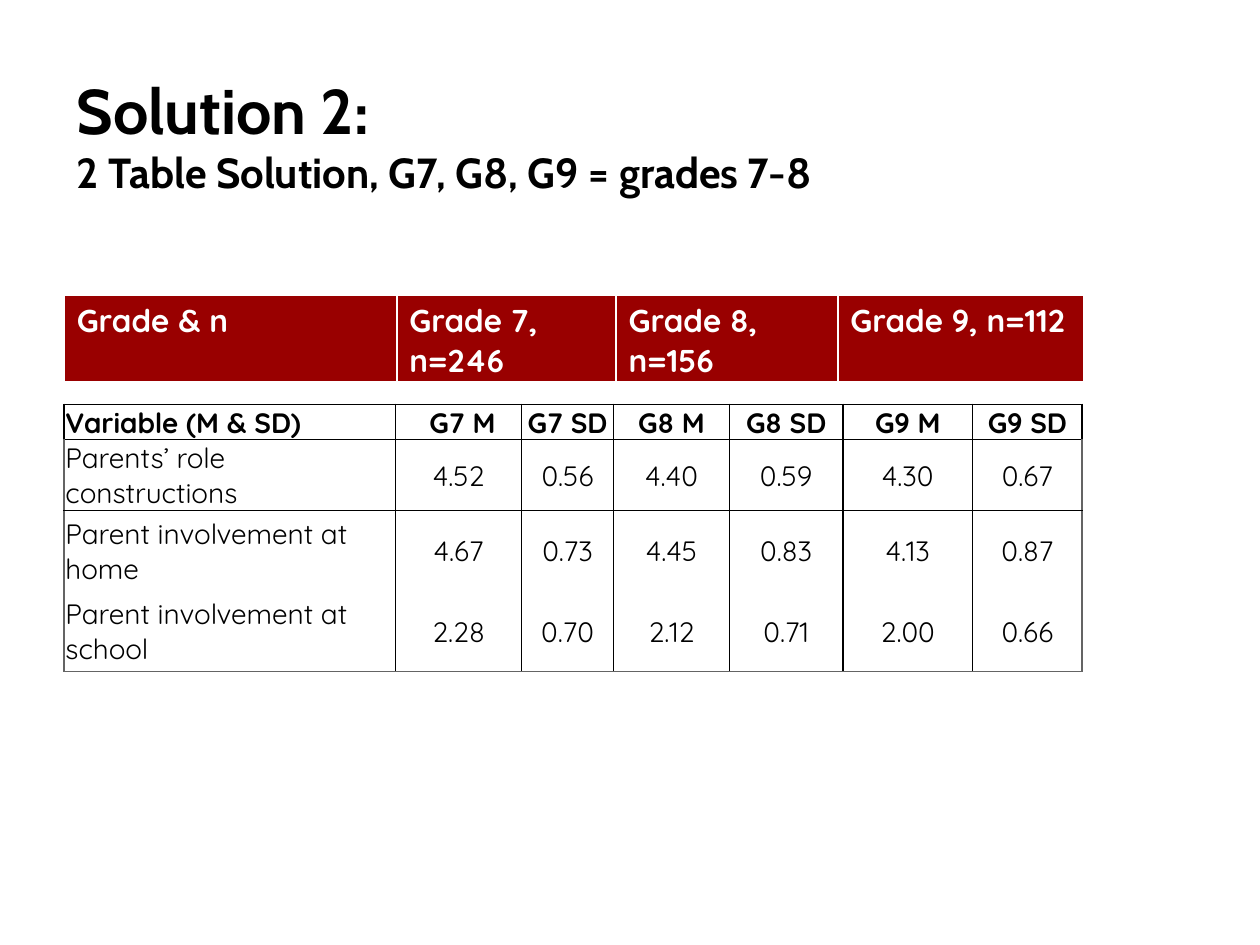
from lxml import etree
from pptx import Presentation
from pptx import util as u
from pptx.dml import color
from pptx.enum import text
from pptx.oxml import ns

HUES = {"ink": "000000", "paper": "FFFFFF", "red": "990000", "gray": "646464"}
LEFT, WIDE = 0.51, 8.09


def style(run, **form):
    """Set font values on a run; hue is a key of HUES."""
    run.font.color.rgb = color.RGBColor.from_string(HUES[form.pop("hue")])
    for key, val in form.items():
        setattr(run.font, key, val)


def edge(cell, lines):
    """Draw cell borders; lines maps L, R, T, B to (hue, points)."""
    props = cell._tc.get_or_add_tcPr()
    for spot, side in enumerate("LRTB"):
        line = etree.Element(ns.qn("a:ln" + side))
        props.insert(spot, line)
        if side not in lines:
            etree.SubElement(line, ns.qn("a:noFill"))
            continue
        hue, size = lines[side]
        line.set("w", str(u.Pt(size)))
        fill = etree.SubElement(line, ns.qn("a:solidFill"))
        etree.SubElement(fill, ns.qn("a:srgbClr"), val=HUES[hue])


deck = Presentation()
deck.slide_width, deck.slide_height = u.Inches(10), u.Inches(7.5)
slide = deck.slides.add_slide(deck.slide_layouts[6])

# Title
box = slide.shapes.add_textbox(u.Inches(LEFT), u.Inches(0.44), u.Inches(8.08), u.Inches(1.25))
frame = box.text_frame
frame.word_wrap = True
frame.vertical_anchor = text.MSO_ANCHOR.MIDDLE
para = frame.paragraphs[0]
for line, size in (("Solution 2:", 36), ("2 Table Solution, G7, G8, G9 = grades 7-8", 24)):
    if para.runs:
        para.add_line_break()
    run = para.add_run()
    run.text = line
    style(run, name="Cabin", size=u.Pt(size), bold=True, hue="ink")

# Two tables: the grade band and the scores
grades = [["Grade & n", "Grade 7, n=246", "Grade 8, n=156", "Grade 9, n=112"]]
scores = [
    ["Variable (M & SD)", " G7 M", "G7 SD", "G8 M", "G8 SD", "G9 M", "G9 SD"],
    ["Parents’ role constructions", "4.52", "0.56", "4.40", "0.59", "4.30", "0.67"],
    ["Parent involvement at home", "4.67", "0.73", "4.45", "0.83", "4.13", "0.87"],
    ["Parent involvement at school", "2.28", "0.70", "2.12", "0.71", "2.00", "0.66"],
]
grids = []
for top, rows, cols, highs in (
    (2.34, grades, [2.64, 1.74, 1.76, 1.95], [0.7]),
    (3.21, scores, [2.63, 1, 0.73, 0.92, 0.9, 1.03, 0.87], [0.28, 0.56, 0.64, 0.64]),
):
    grid = slide.shapes.add_table(
        len(rows), len(cols), u.Inches(LEFT), u.Inches(top), u.Inches(WIDE), u.Inches(sum(highs))
    ).table
    grid.first_row = grid.horz_banding = False
    for col, wide in zip(grid.columns, cols):
        col.width = u.Inches(wide)
    for row, high in zip(grid.rows, highs):
        row.height = u.Inches(high)
    grids.append(grid)
band, body = grids

# Grade band
for cell, word in zip(band.rows[0].cells, grades[0]):
    cell.fill.solid()
    cell.fill.fore_color.rgb = color.RGBColor.from_string(HUES["red"])
    run = cell.text_frame.paragraphs[0].add_run()
    run.text = word
    style(run, name="Quicksand", size=u.Pt(18), bold=True, hue="paper")
    edge(cell, {"L": ("paper", 1), "R": ("paper", 1), "T": ("paper", 1), "B": ("paper", 3)})

# Scores
inset = {"margin_left": 0.01, "margin_right": 0.01, "margin_top": 0.01, "margin_bottom": 0}
last = len(scores[0]) - 1
for r, row in enumerate(scores):
    rim = "gray" if r else "ink"
    for c, word in enumerate(row):
        cell = body.cell(r, c)
        cell.fill.background()
        cell.vertical_anchor = text.MSO_ANCHOR.MIDDLE
        for key, val in inset.items():
            setattr(cell, key, u.Inches(val))
        para = cell.text_frame.paragraphs[0]
        para.alignment = text.PP_ALIGN.CENTER if c else text.PP_ALIGN.LEFT
        run = para.add_run()
        run.text = word
        style(run, name="Quicksand", size=u.Pt(16), bold=r == 0, hue="ink")
        # The last two rows have no line between them
        lines = {"L": (rim if c == 0 else "ink", 1), "R": (rim if c == last else "ink", 1)}
        if r < 3:
            lines["T"] = ("ink", 1)
        if r != 2:
            lines["B"] = ("gray" if r == 3 else "ink", 1)
        edge(cell, lines)

deck.save("out.pptx")
